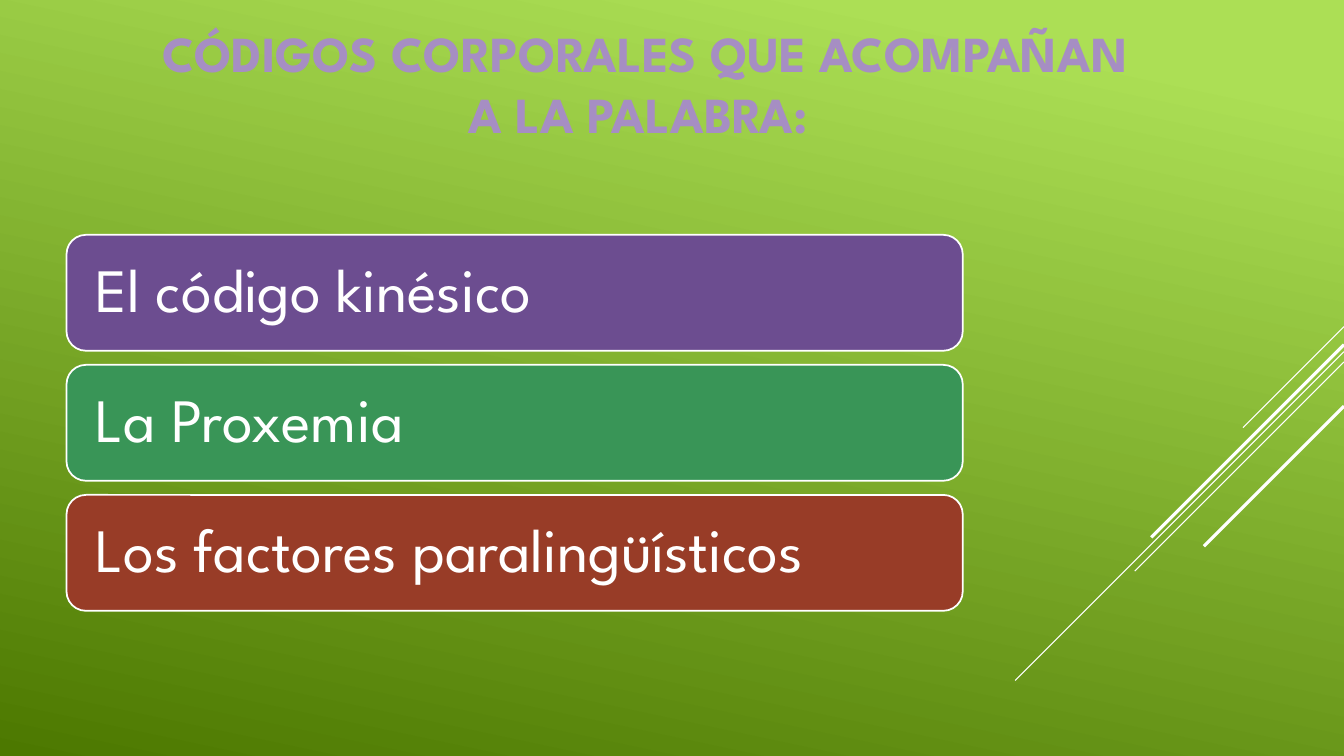
import pptx
import pptx.dml.color
import pptx.enum.shapes
import pptx.enum.text
import pptx.oxml
import pptx.util

FONT = "League Spartan"
WHITE = "FFFFFF"
TITLE_LINES = ["CÓDIGOS CORPORALES QUE ACOMPAÑAN", "A LA PALABRA: "]
CODES = [
    ("El código kinésico", "6C4D90"),
    ("La Proxemia", "399557"),
    ("Los factores paralingüísticos", "983C27"),
]
BAR_TO_GAP = 8.2
RAYS = [(0, 30.7, 0.75), (7.1, 100, 0.75), (10, 63.6, 0.75), (5.1, 58.6, 2.25), (22.5, 42.6, 2.25)]


def color(hex_text):
    """Turn a hex string into a colour."""
    return pptx.dml.color.RGBColor.from_string(hex_text)


def apply(target, values):
    """Set each attribute of the target from a dict."""
    for name, value in values.items():
        setattr(target, name, value)


def area(deck, left, top, width, height):
    """Convert percentages of the slide into a box."""
    wide, high = deck.slide_width / 100, deck.slide_height / 100
    return [round(left * wide), round(top * high), round(width * wide), round(height * high)]


def write(para, text, size, hex_text, bold, layout):
    """Write one formatted paragraph."""
    span = para.add_run()
    span.text = text
    apply(span.font, {"name": FONT, "size": pptx.util.Pt(size), "bold": bold})
    span.font.color.rgb = color(hex_text)
    apply(para, layout)


def paint_background(page):
    """Fill the page with the green gradient."""
    fill = page.background.fill
    fill.gradient()
    fill.gradient_angle = 258
    for stop, (position, hex_text) in zip(fill.gradient_stops, [(0.1, "ACDF55"), (1, "4C7800")]):
        stop.position = position
        stop.color.rgb = color(hex_text)


def add_rays(page, box):
    """Draw the diagonal rays from the right edge of the box."""
    left, top, width, height = box
    right = left + width
    for start, reach, weight in RAYS:
        y = round(top + height * start / 100)
        run = round(width * reach / 100)
        ray = page.shapes.add_connector(
            pptx.enum.shapes.MSO_CONNECTOR.STRAIGHT, right, y, right - run, y + run)
        ray.line.color.rgb = color(WHITE)
        ray.line.width = pptx.util.Pt(weight)
        ray._element.spPr.append(pptx.oxml.parse_xml(
            '<a:effectLst xmlns:a="http://schemas.openxmlformats.org/drawingml/2006/main"/>'))


def add_bars(page, box):
    """Stack one rounded bar per code in the box."""
    left, top, width, height = box
    gap = height / (len(CODES) * (BAR_TO_GAP + 1) - 1)
    bar_height = gap * BAR_TO_GAP
    inset = pptx.util.Inches(0.23)
    for index, (text, hex_text) in enumerate(CODES):
        bar = page.shapes.add_shape(
            pptx.enum.shapes.MSO_SHAPE.ROUNDED_RECTANGLE,
            left, round(top + index * (bar_height + gap)), width, round(bar_height))
        bar.shadow.inherit = False
        bar.fill.solid()
        bar.fill.fore_color.rgb = color(hex_text)
        bar.line.color.rgb = color(WHITE)
        bar.line.width = pptx.util.Pt(1.25)
        apply(bar.text_frame, {
            "word_wrap": True, "vertical_anchor": pptx.enum.text.MSO_ANCHOR.MIDDLE,
            "margin_left": inset, "margin_right": inset,
            "margin_top": inset, "margin_bottom": inset})
        write(bar.text_frame.paragraphs[0], text, 44, WHITE, False,
              {"alignment": pptx.enum.text.PP_ALIGN.LEFT, "line_spacing": 0.9})


def add_title(page, box):
    """Place the two-line title in the box."""
    title = page.shapes.title
    apply(title, dict(zip(("left", "top", "width", "height"), box)))
    frame = title.text_frame
    apply(frame, {"word_wrap": False, "vertical_anchor": pptx.enum.text.MSO_ANCHOR.TOP,
                  "auto_size": pptx.enum.text.MSO_AUTO_SIZE.SHAPE_TO_FIT_TEXT})
    for index, text in enumerate(TITLE_LINES):
        para = frame.add_paragraph() if index else frame.paragraphs[0]
        write(para, text, 36, "A68EC3", True,
              {"alignment": pptx.enum.text.PP_ALIGN.CENTER, "space_before": pptx.util.Pt(0)})


def main():
    """Build and save the deck."""
    deck = pptx.Presentation()
    apply(deck, {"slide_width": pptx.util.Inches(13.33), "slide_height": pptx.util.Inches(7.5)})
    page = deck.slides.add_slide(deck.slide_layouts.get_by_name("Title Only"))
    paint_background(page)
    add_rays(page, area(deck, 75.53, 43.2, 24.47, 46.8))
    add_bars(page, area(deck, 4.95, 31.07, 66.68, 49.73))
    add_title(page, area(deck, 7.8, 2.27, 80.4, 17.47))
    deck.save("out.pptx")


if __name__ == "__main__":
    main()
